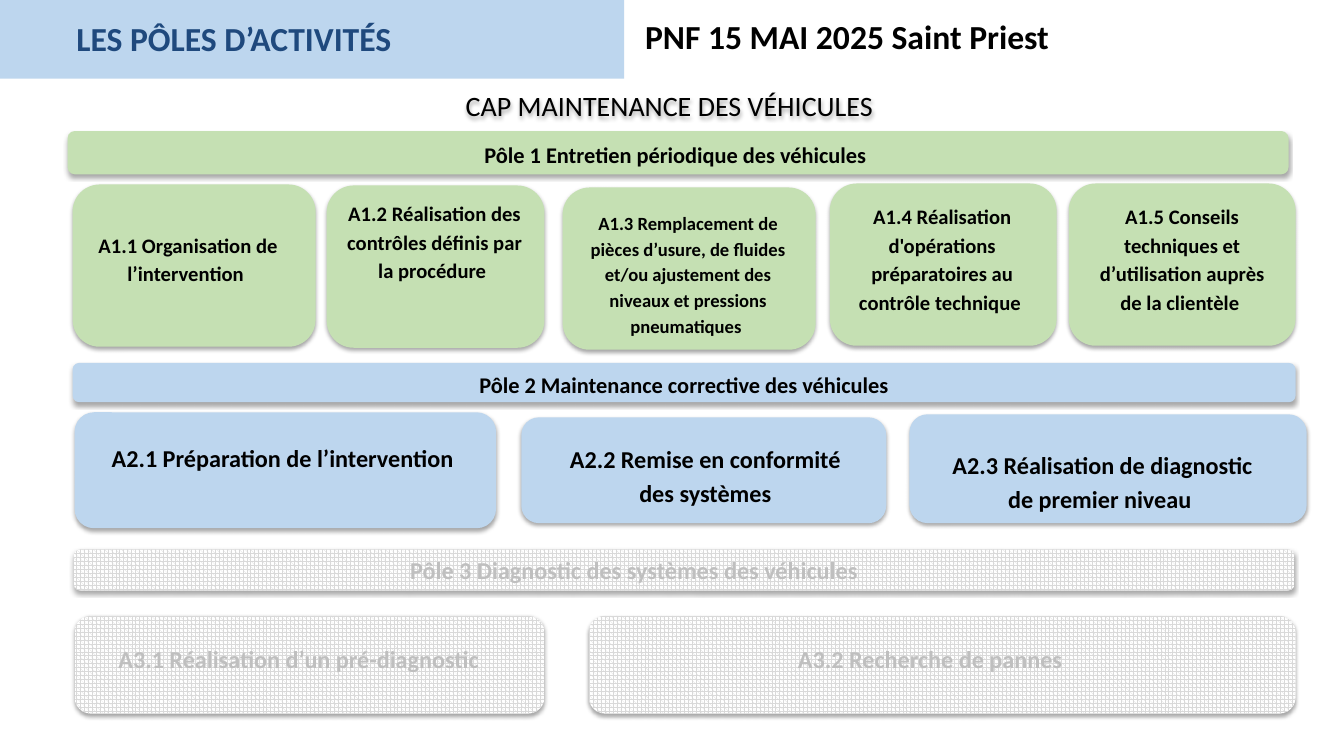
from dataclasses import dataclass

from lxml import etree
from pptx import Presentation
from pptx.dml.color import RGBColor
from pptx.enum.dml import MSO_PATTERN
from pptx.enum.shapes import MSO_SHAPE
from pptx.enum.text import MSO_ANCHOR, MSO_AUTO_SIZE, PP_ALIGN
from pptx.oxml.ns import qn
from pptx.util import Emu, Pt

PX = 9144  # 100 px to the inch
FONT = "Calibri"
ROUNDED = MSO_SHAPE.FLOWCHART_ALTERNATE_PROCESS
RECT = MSO_SHAPE.RECTANGLE
SPHERE = MSO_PATTERN.SPHERE
LEFT, CENTER = PP_ALIGN.LEFT, PP_ALIGN.CENTER
MIDDLE = MSO_ANCHOR.MIDDLE
GROW = MSO_AUTO_SIZE.SHAPE_TO_FIT_TEXT

BLACK = RGBColor(0x00, 0x00, 0x00)
WHITE = RGBColor(0xFF, 0xFF, 0xFF)
GREEN = RGBColor(0xC5, 0xE0, 0xB3)
BLUE = RGBColor(0xBD, 0xD6, 0xEE)
NAVY = RGBColor(0x1F, 0x49, 0x7D)
DOTS = RGBColor(0xD9, 0xD9, 0xD9)
FADED = RGBColor(0xBF, 0xBF, 0xBF)

Box = tuple[int, int, int, int]


@dataclass(frozen=True)
class Style:
    """Look of a pole; a fill of None means the greyed-out pattern."""
    fill: RGBColor | None
    color: RGBColor


@dataclass(frozen=True)
class Bar:
    box: Box
    text: str
    style: Style


@dataclass(frozen=True)
class Card:
    box: Box
    caption: Box
    text: str
    style: Style
    size: float = 17.3
    spacing: float = 1.15


POLE_1 = Style(GREEN, BLACK)
POLE_2 = Style(BLUE, BLACK)
POLE_3 = Style(None, FADED)

BARS = [
    Bar((67, 130, 1211, 43), "Pôle 1 Entretien périodique des véhicules ", POLE_1),
    Bar((72, 360, 1213, 39), "Pôle 2 Maintenance corrective des véhicules", POLE_2),
]

CARDS = [
    Card((72, 183, 241, 161), (80, 222, 213, 65),
         "A1.1 Organisation de l’intervention ", POLE_1, 14.7),
    Card((324, 184, 216, 161), (334, 191, 194, 94),
         "A1.2 Réalisation des contrôles définis par la procédure ", POLE_1, 14.7),
    Card((558, 186, 251, 161), (570, 202, 225, 138),
         "A1.3 Remplacement de pièces d’usure, de fluides et/ou ajustement "
         "des niveaux et pressions pneumatiques ", POLE_1, 13.3),
    Card((823, 182, 225, 161), (835, 194, 199, 122),
         "A1.4 Réalisation d'opérations préparatoires au contrôle technique ",
         POLE_1, 14.7),
    Card((1060, 182, 225, 161), (1069, 194, 207, 122),
         "A1.5 Conseils techniques et d’utilisation auprès de la clientèle ",
         POLE_1, 14.7),
    Card((74, 409, 418, 115), (99, 431, 368, 42),
         "A2.1 Préparation de l’intervention ", POLE_2),
    Card((517, 414, 362, 105), (540, 432, 319, 75),
         "A2.2 Remise en conformité des systèmes", POLE_2),
    Card((902, 411, 394, 108), (920, 438, 347, 75),
         "A2.3 Réalisation de diagnostic de premier niveau ", POLE_2),
    Card((73, 545, 1211, 41), (52, 542, 1159, 42),
         "Pôle 3 Diagnostic des systèmes des véhicules ", POLE_3),
    Card((74, 611, 466, 97), (80, 634, 438, 39),
         "A3.1 Réalisation d’un pré-diagnostic ", POLE_3, spacing=1.0),
    Card((584, 611, 701, 97), (593, 634, 659, 39),
         "A3.2 Recherche de pannes", POLE_3, spacing=1.0),
]


def emu(box: Box) -> list[Emu]:
    return [Emu(v * PX) for v in box]


def add_shadow(sp) -> None:
    sp.shadow.inherit = False
    effects = sp._element.spPr.find(qn("a:effectLst"))
    shadow = etree.SubElement(effects, qn("a:outerShdw"), blurRad=str(Pt(3.1)),
                              dist=str(Pt(1.8)), dir="5400000", rotWithShape="0")
    color = etree.SubElement(shadow, qn("a:srgbClr"), val=str(BLACK))
    etree.SubElement(color, qn("a:alpha"), val="35000")


def add_panel(shapes, kind, box: Box, fill: RGBColor | None):
    sp = shapes.add_shape(kind, *emu(box))
    sp.shadow.inherit = False
    sp.line.fill.background()
    if fill is None:
        sp.fill.patterned()
        sp.fill.pattern = SPHERE
        sp.fill.fore_color.rgb = DOTS
        sp.fill.back_color.rgb = WHITE
    else:
        sp.fill.solid()
        sp.fill.fore_color.rgb = fill
    return sp


def write(sp, text: str, size: float, color: RGBColor, bold: bool = True,
          align=CENTER, spacing: float = 1.0) -> None:
    tf = sp.text_frame
    tf.word_wrap = True
    p = tf.paragraphs[0]
    p.alignment = align
    p.line_spacing = spacing
    r = p.add_run()
    r.text = text
    r.font.name = FONT
    r.font.size = Pt(size)
    r.font.bold = bold
    r.font.color.rgb = color


def add_label(shapes, box: Box, text: str, size: float, color: RGBColor, **look):
    sp = shapes.add_textbox(*emu(box))
    write(sp, text, size, color, **look)
    sp.text_frame.auto_size = GROW
    return sp


def add_bar(shapes, bar: Bar) -> None:
    sp = add_panel(shapes, ROUNDED, bar.box, bar.style.fill)
    add_shadow(sp)
    sp.text_frame.vertical_anchor = MIDDLE
    write(sp, bar.text, 16, bar.style.color, spacing=1.15)


def add_card(shapes, card: Card) -> None:
    group = shapes.add_group_shape().shapes
    add_shadow(add_panel(group, ROUNDED, card.box, card.style.fill))
    caption = add_label(group, card.caption, card.text, card.size,
                        card.style.color, spacing=card.spacing)
    if card.style.fill is not None:
        caption.fill.solid()
        caption.fill.fore_color.rgb = card.style.fill


def main() -> None:
    prs = Presentation()
    prs.slide_width, prs.slide_height = Emu(1333 * PX), Emu(750 * PX)
    s = prs.slides.add_slide(prs.slide_layouts[6])

    add_panel(s.shapes, RECT, (0, 0, 619, 78), BLUE)
    add_label(s.shapes, (630, 11, 423, 50), "PNF 15 MAI 2025 Saint Priest",
              24, BLACK, align=LEFT)
    add_label(s.shapes, (66, 13, 553, 50), "LES PÔLES D’ACTIVITÉS",
              24, NAVY, align=LEFT)
    add_shadow(add_label(s.shapes, (307, 83, 714, 44),
                         "CAP MAINTENANCE DES VÉHICULES", 20, BLACK, bold=False))
    for bar in BARS:
        add_bar(s.shapes, bar)
    for card in CARDS:
        add_card(s.shapes, card)

    prs.save("out.pptx")


if __name__ == "__main__":
    main()
